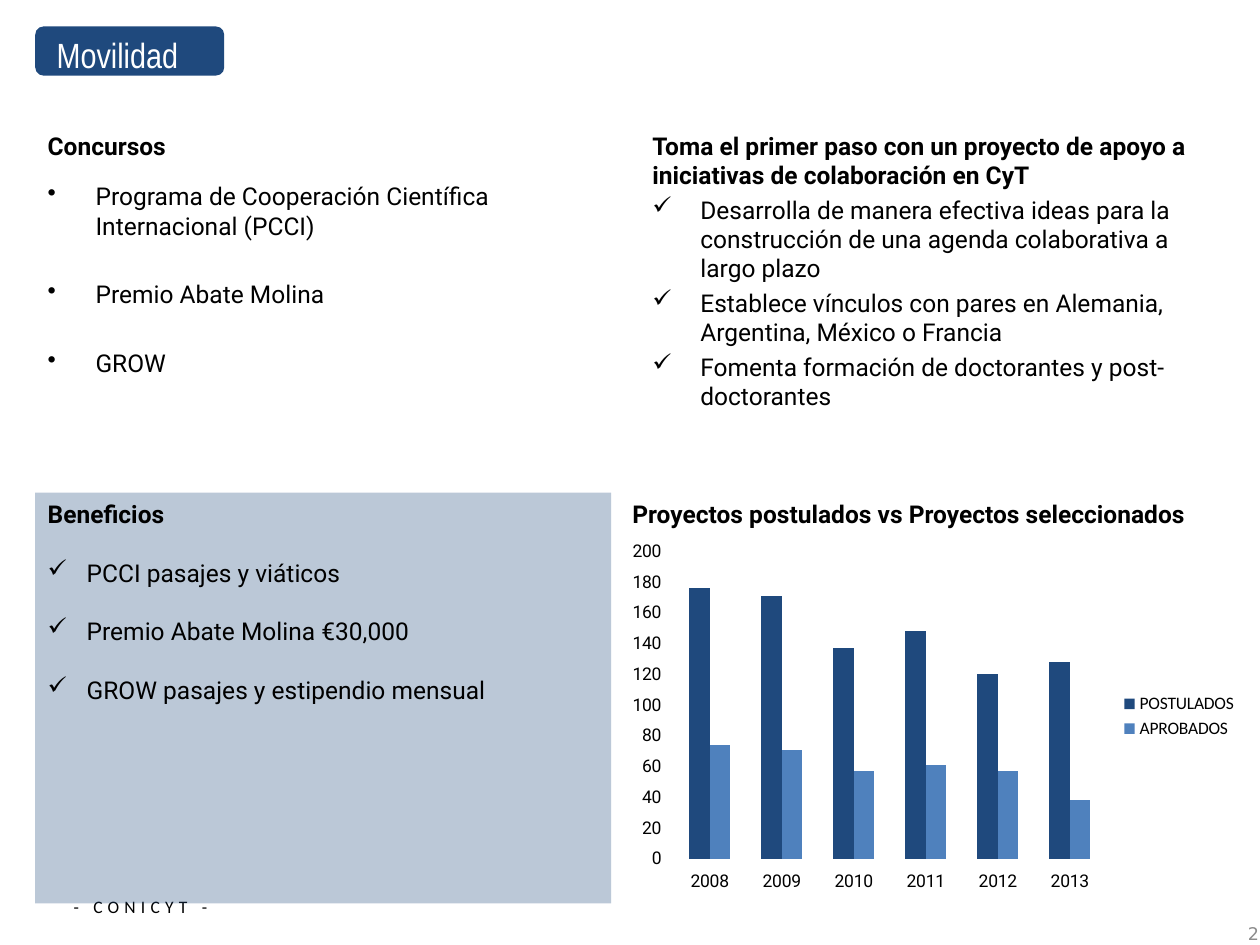
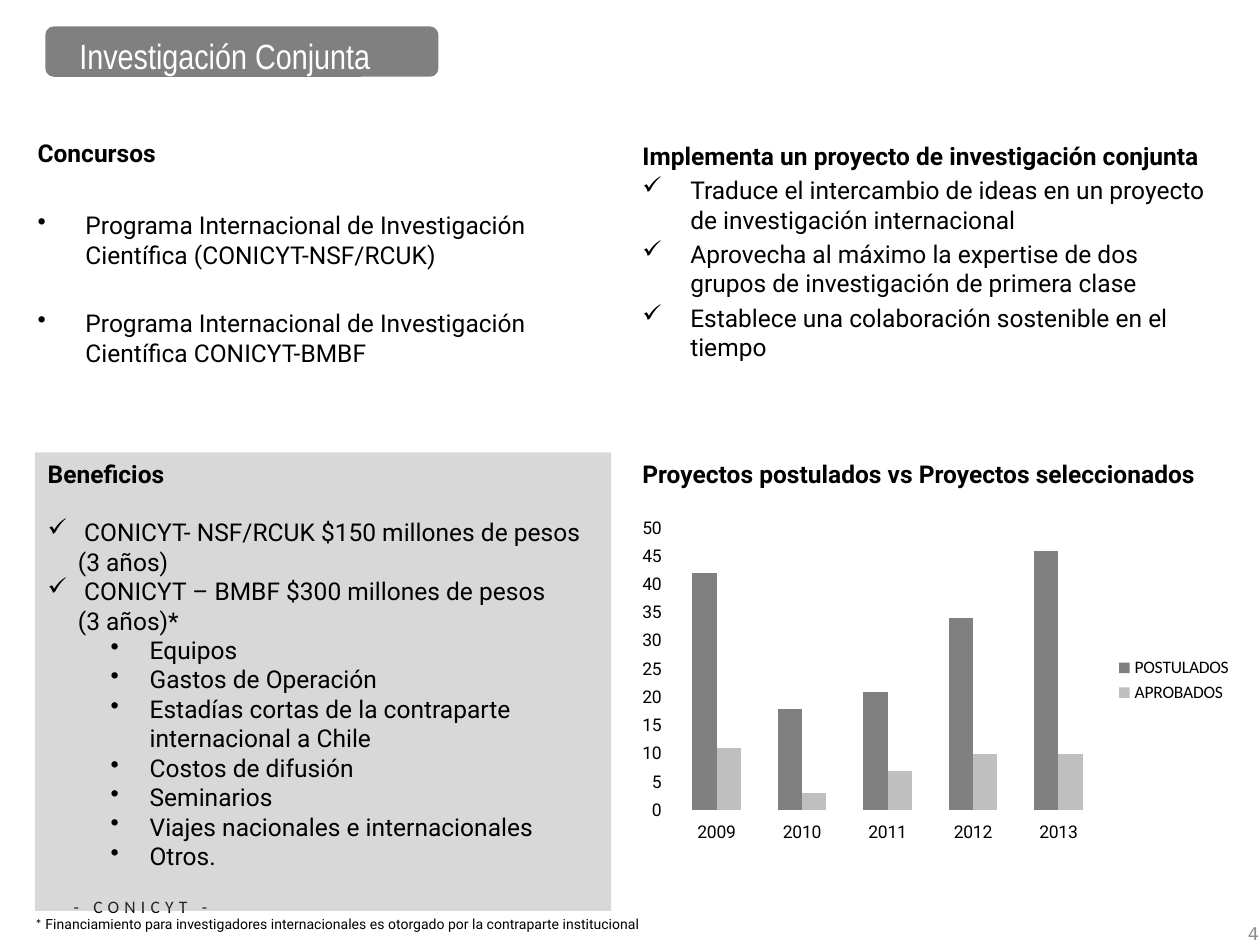
from typing import NamedTuple

from lxml.etree import SubElement
from pptx import Presentation
from pptx.chart.data import CategoryChartData as ChartData
from pptx.dml.color import RGBColor
from pptx.enum.chart import XL_CHART_TYPE as Chart, XL_LEGEND_POSITION as Legend
from pptx.enum.shapes import MSO_SHAPE as Shape
from pptx.enum.text import MSO_ANCHOR as Anchor, PP_ALIGN as Align
from pptx.oxml.ns import qn
from pptx.util import Inches, Pt

NAVY = RGBColor(0x1F, 0x49, 0x7D)
BLUE = RGBColor(0x4F, 0x81, 0xBD)
GRAY = RGBColor(0x80, 0x80, 0x80)
SILVER = RGBColor(0xBF, 0xBF, 0xBF)
PALE = RGBColor(0x8C, 0x8C, 0x8C)
BLACK = RGBColor(0, 0, 0)
WHITE = RGBColor(0xFF, 0xFF, 0xFF)

BODY, HEAD, SMALL, PAGE = "Roboto", "Arial Narrow", "Calibri", "DejaVu Sans"
TICK, DOT = "✓", "•"
NEAR = 2.8      # space before a paragraph, in points
LINE = 16.8     # one line of body text
FAR = LINE + 2 * NEAR


class Item(NamedTuple):
    text: str
    mark: str = ""
    left: float = 0
    hang: float = 0
    gap: float = 0
    bold: bool = False


def head(text):
    return Item(text, bold=True)


def points(mark, gap, texts, left=0.38, hang=0.38):
    return [Item(text, mark, left, hang, gap) for text in texts]


class Deck:
    def __init__(self):
        self.prs = Presentation()
        self.prs.slide_width = Inches(10)
        self.prs.slide_height = Inches(7.5)
        self.slide = None
        self.main = self.light = BLACK

    def start(self, main, light, number):
        """Open a slide with its two colours, footer and page number."""
        self.main, self.light = main, light
        self.slide = self.prs.slides.add_slide(self.prs.slide_layouts[5])
        foot = self.box(0.38, 7.06, 1.47, 0.33)
        para = foot.paragraphs[0]
        para.alignment = Align.CENTER
        run = self.run(para, "- CONICYT -", SMALL, 10)
        run.font._element.set("spc", "300")
        page = self.box(7.76, 7.21, 2.33, 0.4)
        page.vertical_anchor = Anchor.MIDDLE
        page.paragraphs[0].alignment = Align.RIGHT
        self.run(page.paragraphs[0], number, PAGE, 10, PALE)

    def run(self, para, text, face=BODY, size=14, color=BLACK, bold=False):
        run = para.add_run()
        run.text = text
        font = run.font
        font.name, font.size, font.bold = face, Pt(size), bold
        font.color.rgb = color
        return run

    def box(self, left, top, width, height, wrap=True):
        frame = self.slide.shapes.add_textbox(
            Inches(left), Inches(top), Inches(width), Inches(height)).text_frame
        frame.word_wrap = wrap
        return frame

    def shape(self, kind, left, top, width, height):
        shape = self.slide.shapes.add_shape(
            kind, Inches(left), Inches(top), Inches(width), Inches(height))
        shape.shadow.inherit = False
        shape.fill.solid()
        shape.fill.fore_color.rgb = self.main
        shape.line.fill.background()
        return shape

    def title(self, text, badge, place):
        self.shape(Shape.ROUNDED_RECTANGLE, *badge)
        title = self.slide.shapes.title
        title.left, title.top, title.width, title.height = map(Inches, place)
        self.slide.shapes._spTree.append(title._element)  # in front of the badge
        frame = title.text_frame
        frame.vertical_anchor = Anchor.MIDDLE
        frame.paragraphs[0].alignment = Align.LEFT
        self.run(frame.paragraphs[0], text, HEAD, 20, WHITE)

    def fill(self, frame, items):
        for i, item in enumerate(items):
            para = frame.add_paragraph() if i else frame.paragraphs[0]
            para.alignment = Align.LEFT
            props = para._p.get_or_add_pPr()
            props.set("marL", str(Inches(item.left)))
            props.set("indent", str(-Inches(item.hang)))
            if item.mark:
                SubElement(props, qn("a:buChar")).set("char", item.mark)
            para.space_before = Pt(item.gap if i else 0)
            self.run(para, item.text, bold=item.bold)

    def text(self, left, top, width, height, items):
        self.fill(self.box(left, top, width, height), items)

    def panel(self, top, height, items):
        """Draw the see-through panel of benefits."""
        shape = self.shape(Shape.RECTANGLE, 0.28, top, 4.57, height)
        color = shape.fill._xPr.find(".//" + qn("a:srgbClr"))
        SubElement(color, qn("a:alpha")).set("val", "30000")
        shape.text_frame.word_wrap = True
        shape.text_frame.vertical_anchor = Anchor.TOP
        self.fill(shape.text_frame, items)

    def note(self, mark, text):
        para = self.box(0.18, 7.22, 5.06, 0.24, wrap=False).paragraphs[0]
        self.run(para, mark, SMALL, 8)
        self.run(para, text, BODY, 8)

    def chart(self, place, years, sent, won, top, step):
        data = ChartData()
        data.categories = [str(year) for year in years]
        data.add_series("POSTULADOS", sent)
        data.add_series("APROBADOS", won)
        chart = self.slide.shapes.add_chart(
            Chart.COLUMN_CLUSTERED, *map(Inches, place), data).chart
        chart.has_title = False
        chart.font.name, chart.font.size = SMALL, Pt(10)
        chart.font.color.rgb = BLACK
        chart.has_legend = True
        chart.legend.position = Legend.RIGHT
        chart.legend.include_in_layout = False
        for axis in (chart.category_axis, chart.value_axis):
            axis.has_major_gridlines = False
            axis.format.line.fill.background()
            font = axis.tick_labels.font
            font.name, font.size = BODY, Pt(10)
            font.color.rgb = BLACK
        scale = chart.value_axis
        scale.minimum_scale, scale.maximum_scale, scale.major_unit = 0, top, step
        plot = chart.plots[0]
        plot.gap_width, plot.overlap, plot.vary_by_categories = 150, 0, False
        for series, color in zip(plot.series, (self.main, self.light)):
            series.format.fill.solid()
            series.format.fill.fore_color.rgb = color


CALLS = [head("Concursos")]
RATIO = [head("Proyectos postulados vs Proyectos seleccionados")]
GAINS = head("Beneficios")


def travel(deck):
    deck.start(NAVY, BLUE, "2")
    deck.text(5.08, 0.99, 4.72, 2.76, [
        head("Toma el primer paso con un proyecto de apoyo a iniciativas de "
             "colaboración en CyT"),
        *points(TICK, NEAR, [
            "Desarrolla de manera efectiva ideas para la construcción de una "
            "agenda colaborativa a largo plazo",
            "Establece vínculos con pares en Alemania, Argentina, México o Francia",
            "Fomenta formación de doctorantes y post-doctorantes"])])
    deck.text(0.28, 1.39, 4.72, 1.73, points(DOT, FAR, [
        "Programa de Cooperación Científica Internacional (PCCI)",
        "Premio Abate Molina",
        "GROW"]))
    deck.panel(3.91, 3.26, [GAINS, *points(TICK, LINE, [
        "PCCI pasajes y viáticos",
        "Premio Abate Molina €30,000",
        "GROW pasajes y estipendio mensual"], 0.31, 0.31)])
    deck.title("Movilidad", (0.28, 0.21, 1.5, 0.39), (0.35, 0.05, 1.65, 0.77))
    deck.text(4.92, 3.91, 4.88, 0.34, RATIO)
    deck.chart((4.92, 4.24, 5, 2.89), range(2008, 2014),
               (176, 171, 137, 148, 120, 128), (74, 71, 57, 61, 57, 38), 200, 20)
    deck.text(0.28, 0.99, 3.94, 0.34, CALLS)


def study(deck):
    deck.start(GRAY, SILVER, "4")
    deck.text(5, 1.07, 4.72, 2.44, [
        head("Implementa un proyecto de investigación conjunta"),
        *points(TICK, NEAR, [
            "Traduce el intercambio de ideas en un proyecto de investigación "
            "internacional",
            "Aprovecha al máximo la expertise de dos grupos de investigación de "
            "primera clase",
            "Establece una colaboración sostenible en el tiempo"])])
    deck.text(0.2, 1.62, 4.72, 1.57, points(DOT, FAR, [
        "Programa Internacional de Investigación Científica (CONICYT-NSF/RCUK)",
        "Programa Internacional de Investigación Científica CONICYT-BMBF"]))
    deck.text(5, 3.59, 4.88, 0.34, RATIO)
    deck.panel(3.59, 3.64, [
        GAINS,
        Item("CONICYT- NSF/RCUK $150 millones de pesos", TICK, 0.29, 0.29, LINE),
        Item("(3 años)", left=0.24),
        Item("CONICYT – BMBF $300 millones de pesos", TICK, 0.29, 0.29),
        Item("(3 años)*", left=0.24),
        *points(DOT, 0, [
            "Equipos",
            "Gastos de Operación",
            "Estadías cortas de la contraparte internacional a Chile",
            "Costos de difusión",
            "Seminarios",
            "Viajes nacionales e internacionales",
            "Otros."], 0.81, 0.31)])
    deck.note("*", " Financiamiento para investigadores internacionales es "
              "otorgado por la contraparte institucional")
    deck.title("Investigación Conjunta", (0.36, 0.21, 3.12, 0.4),
               (0.53, 0.05, 3.45, 0.78))
    deck.chart((5, 4.06, 4.88, 2.68), range(2009, 2014),
               (42, 18, 21, 34, 46), (11, 3, 7, 10, 10), 50, 5)
    deck.text(0.2, 1.05, 3.94, 0.34, CALLS)


def main():
    deck = Deck()
    travel(deck)
    study(deck)
    deck.prs.save("out.pptx")


if __name__ == "__main__":
    main()
